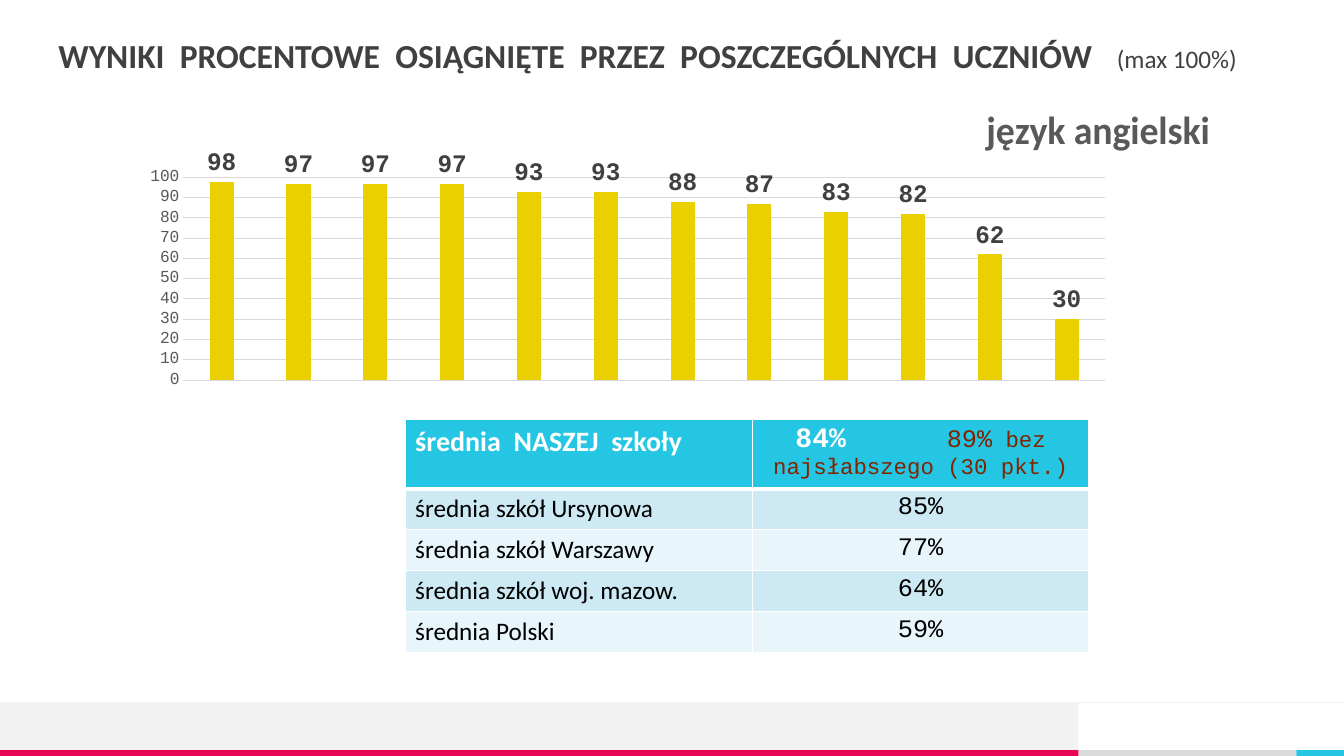
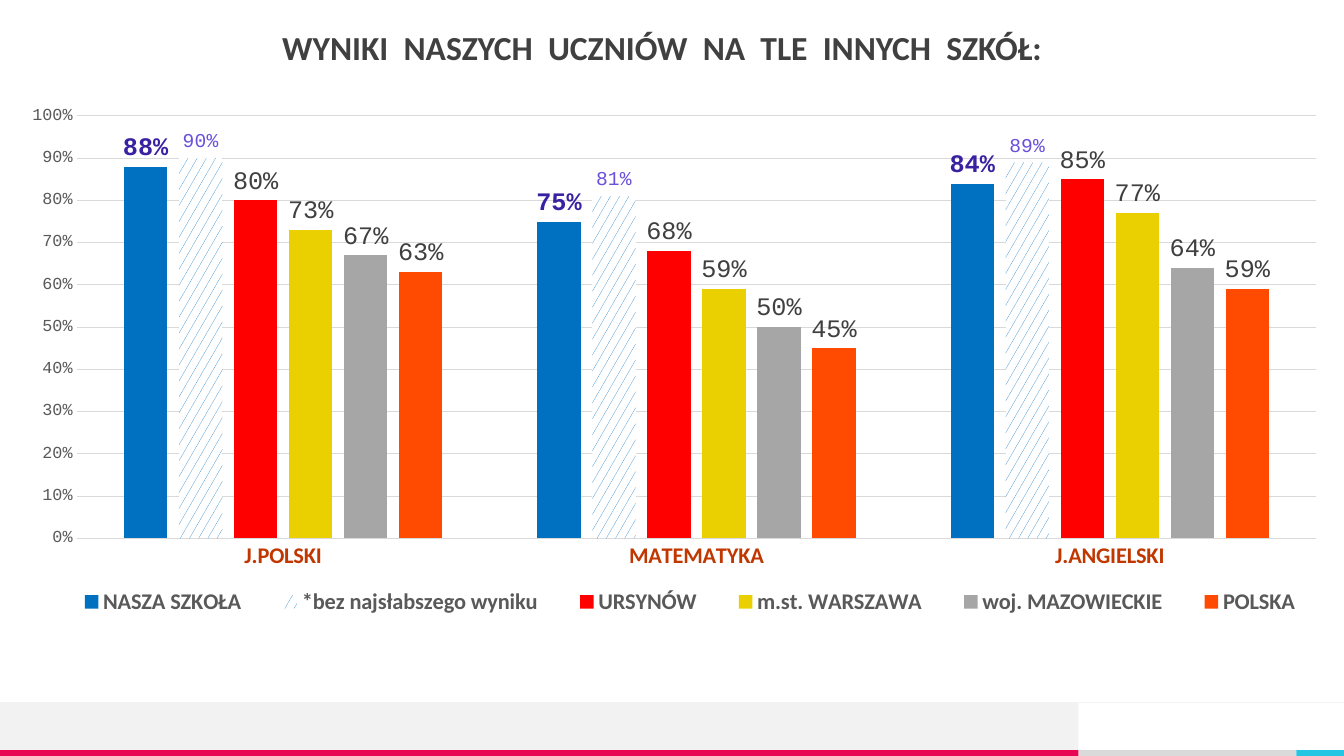
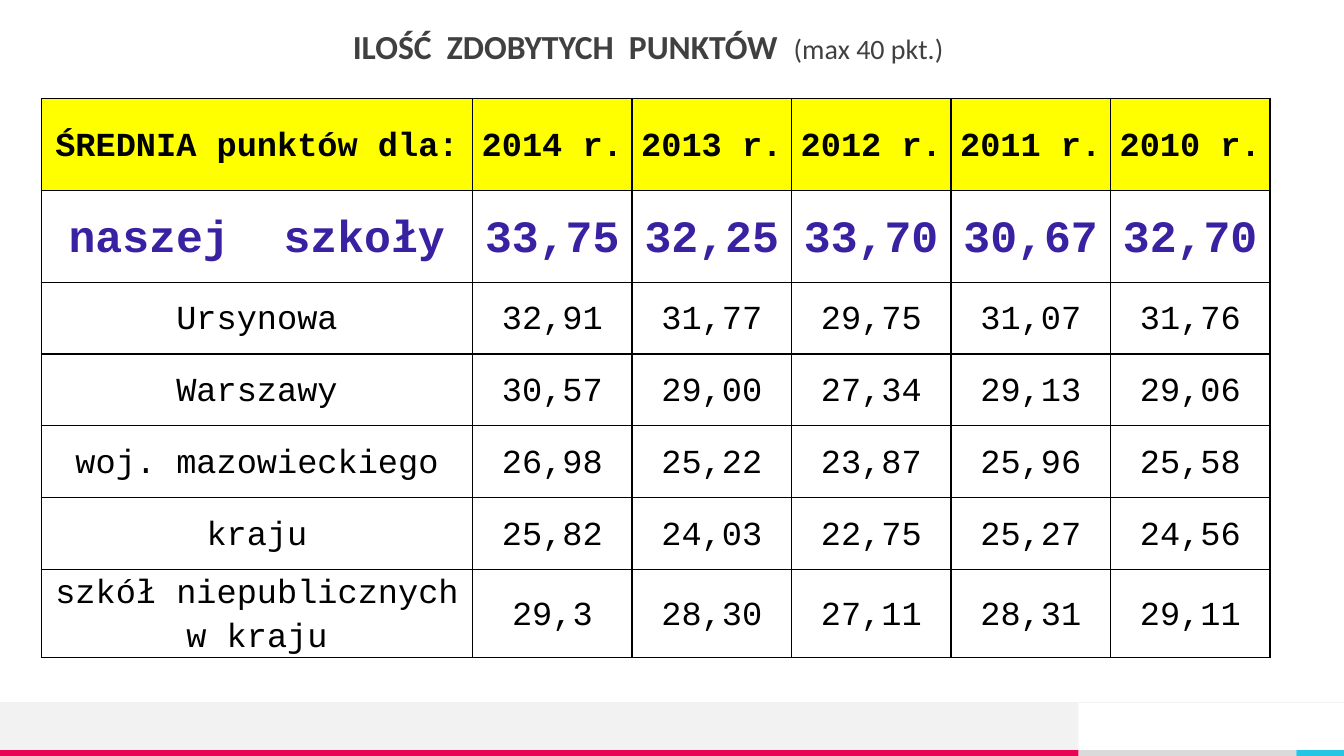
from lxml import etree
from pptx import Presentation
from pptx.chart.data import CategoryChartData
from pptx.dml.color import RGBColor
from pptx.enum.chart import XL_CHART_TYPE, XL_LABEL_POSITION, XL_LEGEND_POSITION, XL_TICK_MARK
from pptx.enum.dml import MSO_PATTERN
from pptx.enum.shapes import MSO_CONNECTOR, MSO_SHAPE
from pptx.enum.text import MSO_ANCHOR, MSO_AUTO_SIZE, PP_ALIGN
from pptx.oxml.ns import qn
from pptx.util import Cm, Pt

COLUMNS = XL_CHART_TYPE.COLUMN_CLUSTERED
OUTSIDE = XL_LABEL_POSITION.OUTSIDE_END
BOTTOM = XL_LEGEND_POSITION.BOTTOM
NO_TICK = XL_TICK_MARK.NONE
CONFETTI = MSO_PATTERN.SMALL_CONFETTI
STRAIGHT = MSO_CONNECTOR.STRAIGHT
RECTANGLE = MSO_SHAPE.RECTANGLE
TOP, MIDDLE = MSO_ANCHOR.TOP, MSO_ANCHOR.MIDDLE
NO_FIT = MSO_AUTO_SIZE.NONE
LEFT, CENTER = PP_ALIGN.LEFT, PP_ALIGN.CENTER

BLACK = RGBColor(0x00, 0x00, 0x00)
WHITE = RGBColor(0xFF, 0xFF, 0xFF)
DARK = RGBColor(0x40, 0x40, 0x40)
GREY = RGBColor(0x59, 0x59, 0x59)
MID_GREY = RGBColor(0xA6, 0xA6, 0xA6)
GRID = RGBColor(0xD9, 0xD9, 0xD9)
SILVER = RGBColor(0xDA, 0xDA, 0xDA)
PALE = RGBColor(0xF2, 0xF2, 0xF2)
CYAN = RGBColor(0x25, 0xC6, 0xE3)
CYAN_BAND = RGBColor(0xCD, 0xEA, 0xF4)
CYAN_LIGHT = RGBColor(0xE8, 0xF5, 0xFA)
CRIMSON = RGBColor(0xE8, 0x05, 0x54)
YELLOW = RGBColor(0xFF, 0xFF, 0x00)
GOLD = RGBColor(0xEA, 0xD0, 0x00)
BLUE = RGBColor(0x00, 0x70, 0xC0)
RED = RGBColor(0xFF, 0x00, 0x00)
ORANGE = RGBColor(0xFF, 0x4A, 0x01)
RUST = RGBColor(0xC0, 0x37, 0x00)
BROWN = RGBColor(0x80, 0x25, 0x00)
VIOLET = RGBColor(0x39, 0x21, 0xA1)
LILAC = RGBColor(0x6A, 0x50, 0xDB)

SANS = "Calibri"
MONO = "Courier New"


def write(paragraph, text, size=18, color=BLACK, font=SANS, bold=False, spacing=0):
    run = paragraph.add_run()
    run.text = text
    run.font.size = Pt(size)
    run.font.color.rgb = color
    run.font.name = font
    run.font.bold = bold
    if spacing:
        run.font._element.set("spc", str(int(spacing * 100)))


def place(part, index, **fractions):
    for old in part.findall(qn("c:layout")):
        part.remove(old)
    layout = etree.Element(qn("c:layout"))
    manual = etree.SubElement(layout, qn("c:manualLayout"))
    if part.tag == qn("c:plotArea"):
        etree.SubElement(manual, qn("c:layoutTarget")).set("val", "inner")
    for axis in "xy":
        etree.SubElement(manual, qn(f"c:{axis}Mode")).set("val", "edge")
    for key, value in fractions.items():
        etree.SubElement(manual, qn(f"c:{key}")).set("val", str(value))
    part.insert(index, layout)


prs = Presentation()
prs.slide_width, prs.slide_height = Cm(33.87), Cm(19.05)

headings = [
    ((1.47, 0.99, 31.9), "WYNIKI  PROCENTOWE  OSIĄGNIĘTE  PRZEZ  POSZCZEGÓLNYCH  UCZNIÓW", "(max 100%)", 18, 12),
    ((7.11, 0.79, 20.57), "WYNIKI  NASZYCH  UCZNIÓW  NA  TLE  INNYCH  SZKÓŁ:", "", 18, 0),
    ((8.89, 0.76, 17.55), "ILOŚĆ  ZDOBYTYCH  PUNKTÓW", "(max 40 pkt.)", 20, 6),
]
slides = []
for (left, top, width), heading, maximum, maximum_size, gap in headings:
    slide = prs.slides.add_slide(prs.slide_layouts[5])
    slides.append(slide)
    title = slide.shapes.title
    title.left, title.top, title.width, title.height = Cm(left), Cm(top), Cm(width), Cm(0.99)
    frame = title.text_frame
    frame.auto_size, frame.word_wrap, frame.vertical_anchor = NO_FIT, True, TOP
    frame.margin_left = frame.margin_right = frame.margin_top = frame.margin_bottom = 0
    line = frame.paragraphs[0]
    line.alignment, line.line_spacing = LEFT, 0.9
    write(line, heading, size=24, color=DARK, bold=True)
    if maximum:
        write(line, " ", size=24, color=DARK, bold=True, spacing=gap)
        write(line, maximum, size=maximum_size, color=DARK)
english, comparison, points = slides

footer = []
for left, top, width, height, color in [
    (27.18, 18.9, 5.49, 0.15, SILVER),
    (0, 17.7, 27.18, 1.2, PALE),
    (0, 18.9, 27.18, 0.15, CRIMSON),
    (32.67, 18.9, 1.2, 0.15, CYAN),
]:
    band = english.shapes.add_shape(RECTANGLE, Cm(left), Cm(top), Cm(width), Cm(height))
    band.shadow.inherit = False
    band.fill.solid()
    band.fill.fore_color.rgb = color
    band.line.fill.background()
    footer.append(band)
rule = english.shapes.add_connector(STRAIGHT, Cm(33.87), Cm(17.7), Cm(0), Cm(17.7))
rule.line.color.rgb = PALE
rule.line.width = Pt(0.5)
etree.SubElement(rule.element.spPr, qn("a:effectLst"))
for number, part in enumerate([*footer, rule], start=101):
    part.element.xpath("./*/p:cNvPr")[0].set("id", str(number))
    prs.slide_master.shapes.element.append(part.element)

pupil_scores = [98, 97, 97, 97, 93, 93, 88, 87, 83, 82, 62, 30]
subjects = ["J.POLSKI", "MATEMATYKA", "J.ANGIELSKI"]
school_series = [
    ("NASZA SZKOŁA", [0.88, 0.75, 0.84], BLUE, 18, VIOLET, True),
    ("*bez najsłabszego wyniku", [0.9, 0.81, 0.89], None, 14, LILAC, False),
    ("URSYNÓW", [0.8, 0.68, 0.85], RED, 18, DARK, False),
    ("m.st. WARSZAWA", [0.73, 0.59, 0.77], GOLD, 18, DARK, False),
    ("woj. MAZOWIECKIE", [0.67, 0.5, 0.64], MID_GREY, 18, DARK, False),
    ("POLSKA", [0.63, 0.45, 0.59], ORANGE, 18, DARK, False),
]
charts = []
for slide, box, categories, series_rows, number_format, maximum, plot_area in [
    (english, (3.3, 2.34, 27.36, 7.62), [str(n) for n in range(1, 13)],
     [("Series 1", pupil_scores, GOLD, 18, DARK, True)], "General", 100,
     dict(x=0.05, y=0.28, w=0.88, h=0.67)),
    (comparison, (0.25, 2.39, 33.6, 13.31), subjects, school_series, "0%", 1,
     dict(x=0.05, y=0.04, w=0.93, h=0.8)),
]:
    data = CategoryChartData(number_format=number_format)
    data.categories = categories
    for name, values, *_ in series_rows:
        data.add_series(name, values)
    chart = slide.shapes.add_chart(COLUMNS, *map(Cm, box), data).chart
    charts.append(chart)
    chart.font.name, chart.font.size = SANS, Pt(10)
    chart.has_legend = chart.has_title = False
    plot = chart.plots[0]
    plot.gap_width, plot.overlap, plot.vary_by_categories = 219, -27, False
    for series, (_, _, color, size, label_color, bold) in zip(plot.series, series_rows):
        fill = series.format.fill
        if color is None:
            fill.patterned()
            fill.pattern = CONFETTI
            fill.fore_color.rgb, fill.back_color.rgb = BLUE, WHITE
        else:
            fill.solid()
            fill.fore_color.rgb = color
        labels = series.data_labels
        labels.show_value, labels.position = True, OUTSIDE
        labels.number_format, labels.number_format_is_linked = number_format, False
        labels.font.name, labels.font.size, labels.font.bold = MONO, Pt(size), bold
        labels.font.color.rgb = label_color
    scale = chart.value_axis
    scale.minimum_scale, scale.maximum_scale, scale.major_unit = 0, maximum, maximum / 10
    scale.major_tick_mark = NO_TICK
    scale.format.line.fill.background()
    scale.major_gridlines.format.line.color.rgb = GRID
    scale.major_gridlines.format.line.width = Pt(0.75)
    scale.tick_labels.number_format = number_format
    scale.tick_labels.number_format_is_linked = False
    scale.tick_labels.font.name, scale.tick_labels.font.size = MONO, Pt(12)
    scale.tick_labels.font.color.rgb = GREY
    place(chart.element.find(".//" + qn("c:plotArea")), 0, **plot_area)

pupil_chart, school_chart = charts
pupil_chart.category_axis.visible = False
pupil_chart.has_title = True
write(pupil_chart.chart_title.text_frame.paragraphs[0], "język angielski", size=28, color=GREY, bold=True)
pupil_chart.chart_title.include_in_layout = False
place(pupil_chart.element.find(".//" + qn("c:title")), 1, x=0.81, y=0.01)

subject_axis = school_chart.category_axis
subject_axis.major_tick_mark = NO_TICK
subject_axis.format.line.color.rgb = GRID
subject_axis.format.line.width = Pt(0.75)
school_chart.has_legend = True
legend = school_chart.legend
legend.position, legend.include_in_layout = BOTTOM, False
place(school_chart.element.find(".//" + qn("c:legend")), 1, x=0.03, y=0.92, w=0.96, h=0.08)
for font, color in [(subject_axis.tick_labels.font, RUST), (legend.font, GREY)]:
    font.name, font.size, font.bold = SANS, Pt(16), True
    font.color.rgb = color

averages = [
    ("średnia  NASZEJ  szkoły", "84%"),
    ("średnia szkół Ursynowa", "85%"),
    ("średnia szkół Warszawy", "77%"),
    ("średnia szkół woj. mazow.", "64%"),
    ("średnia Polski", "59%"),
]
yearly_points = [
    ("ŚREDNIA punktów dla:", "2014 r.", "2013 r.", "2012 r.", "2011 r.", "2010 r."),
    ("naszej  szkoły", "33,75", "32,25", "33,70", "30,67", "32,70"),
    ("Ursynowa", "32,91", "31,77", "29,75", "31,07", "31,76"),
    ("Warszawy", "30,57", "29,00", "27,34", "29,13", "29,06"),
    ("woj. mazowieckiego", "26,98", "25,22", "23,87", "25,96", "25,58"),
    ("kraju", "25,82", "24,03", "22,75", "25,27", "24,56"),
    ("szkół niepublicznych\nw kraju", "29,3", "28,30", "27,11", "28,31", "29,11"),
]
average_styles = [(CYAN, 20, WHITE, True)] + [(CYAN_BAND, 18, BLACK, False), (CYAN_LIGHT, 18, BLACK, False)] * 2
point_styles = [(YELLOW, 24, BLACK, True), (None, 32, VIOLET, True)] + [(None, 24, BLACK, False)] * 5

tables = []
for slide, left, top, widths, heights, rows, styles, border, first_font, roomy in [
    (english, 10.21, 10.57, [8.76, 8.46], [1.75] + [1.03] * 4, averages, average_styles, WHITE, SANS, False),
    (points, 1.04, 2.49, [10.87] + [4.02] * 5, [2.31] * 2 + [1.81] * 4 + [2.22],
     yearly_points, point_styles, BLACK, MONO, True),
]:
    table = slide.shapes.add_table(len(rows), len(widths), Cm(left), Cm(top),
                                   Cm(sum(widths)), Cm(sum(heights))).table
    tables.append(table)
    for column, width in zip(table.columns, widths):
        column.width = Cm(width)
    for r, (row, style, height) in enumerate(zip(rows, styles, heights)):
        fill_color, size, color, bold = style
        table.rows[r].height = Cm(height)
        for c, text in enumerate(row):
            cell = table.cell(r, c)
            properties = cell._tc.get_or_add_tcPr()
            for side in ("lnL", "lnR", "lnT", "lnB"):
                under_header = not roomy and (r, side) in [(0, "lnB"), (1, "lnT")]
                edge = etree.SubElement(properties, qn(f"a:{side}"), w=str(Pt(3 if under_header else 1)))
                paint = etree.SubElement(edge, qn("a:solidFill"))
                etree.SubElement(paint, qn("a:srgbClr"), val=str(border))
            if fill_color is None:
                cell.fill.background()
            else:
                cell.fill.solid()
                cell.fill.fore_color.rgb = fill_color
            if roomy:
                cell.vertical_anchor = MIDDLE
                cell.margin_left = cell.margin_right = Cm(0.13)
                cell.margin_top = cell.margin_bottom = 0
            for n, words in enumerate(text.split("\n")):
                line = cell.text_frame.add_paragraph() if n else cell.text_frame.paragraphs[0]
                line.alignment = CENTER if c or roomy else LEFT
                if roomy:
                    line.line_spacing = 1.15
                write(line, words, size=size, color=color, font=MONO if c else first_font, bold=bold)

our_average = tables[0].cell(0, 1).text_frame.paragraphs[0]
write(our_average, " ", size=20, font=MONO, spacing=60)
write(our_average, "89%", size=18, color=BROWN, font=MONO)
write(our_average, " bez najsłabszego (30 pkt.)", size=16, color=BROWN, font=MONO)

prs.save("out.pptx")
